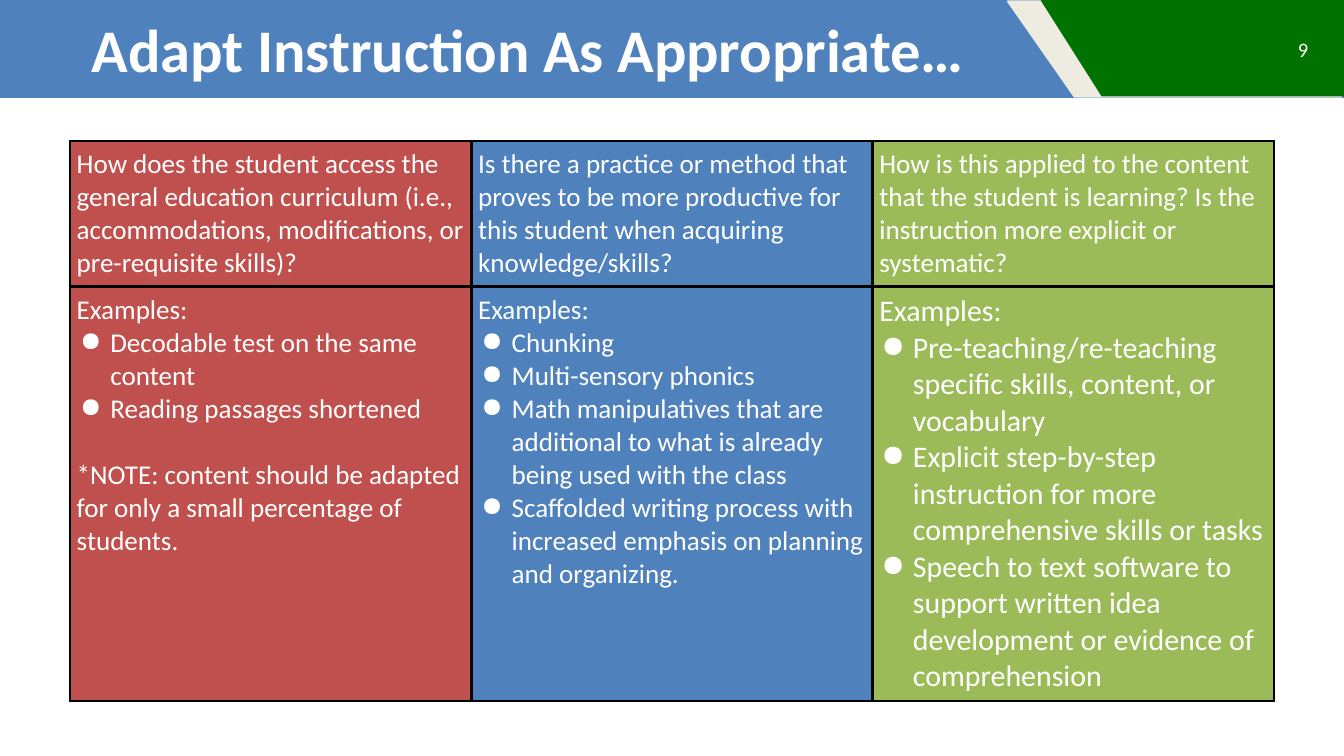
import pptx
import pptx.dml.color
import pptx.enum.shapes
import pptx.enum.text
import pptx.oxml
import pptx.oxml.ns
import pptx.util

Pt = pptx.util.Pt
SHAPE = pptx.enum.shapes.MSO_SHAPE
ALIGN = pptx.enum.text.PP_ALIGN
ANCHOR = pptx.enum.text.MSO_ANCHOR

COLORS = {
    "white": "FFFFFF", "black": "000000", "blue": "4F81BD", "red": "C0504D",
    "lime": "9BBB59", "cream": "EEECE1", "green": "007200",
}

# Each column: fill, text size, bullet hang, question, examples, closing note
COLUMNS = [
    ("red", 29, 32.4,
     "How does the student access the general education curriculum (i.e., "
     "accommodations, modifications, or pre-requisite skills)?",
     ["Decodable test on the same content", "Reading passages shortened"],
     "*NOTE: content should be adapted for only a small percentage of students."),
    ("blue", 29, 32.4,
     "Is there a practice or method that proves to be more productive for this "
     "student when acquiring knowledge/skills?",
     ["Chunking", "Multi-sensory phonics",
      "Math manipulatives that are additional to what is already being used "
      "with the class",
      "Scaffolded writing process with increased emphasis on planning and "
      "organizing."],
     None),
    ("lime", 32, 33.84,
     "How is this applied to the content that the student is learning? Is the "
     "instruction more explicit or systematic?",
     ["Pre-teaching/re-teaching specific skills, content, or vocabulary",
      "Explicit step-by-step instruction for more comprehensive skills or tasks",
      "Speech to text software to support written idea development or evidence "
      "of comprehension"],
     None),
]


def rgb(name):
    return pptx.dml.color.RGBColor.from_string(COLORS[name])


class Deck:
    font = "Calibri"
    heading_size = 29
    inset = 7.2
    bullet_indent = 36
    border = 3

    def __init__(self, width, height):
        self.prs = pptx.Presentation()
        self.prs.slide_width, self.prs.slide_height = Pt(width), Pt(height)
        self.s = self.prs.slides.add_slide(self.prs.slide_layouts[6])

    def shape(self, kind, box, color, rotation=0, line=None):
        sp = self.s.shapes.add_shape(kind, *map(Pt, box))
        sp.shadow.inherit = False
        sp.rotation = rotation
        sp.fill.solid()
        sp.fill.fore_color.rgb = rgb(color)
        if line:
            sp.line.color.rgb = rgb(color)
            sp.line.width = Pt(line)
        else:
            sp.line.fill.background()

    def run(self, p, text, size, bold=False):
        r = p.add_run()
        r.text = text
        r.font.name = self.font
        r.font.size = Pt(size)
        r.font.bold = bold
        r.font.color.rgb = rgb("white")

    def text(self, box, text, size, align, insets, bold=False):
        tf = self.s.shapes.add_textbox(*map(Pt, box)).text_frame
        tf.word_wrap = True
        tf.vertical_anchor = ANCHOR.MIDDLE
        tf.margin_left = tf.margin_right = Pt(insets[0])
        tf.margin_top = tf.margin_bottom = Pt(insets[1])
        p = tf.paragraphs[0]
        p.alignment = align
        self.run(p, text, size, bold)

    def bullet(self, p, hang):
        pPr = p._p.get_or_add_pPr()
        pPr.set("marL", str(Pt(self.bullet_indent)))
        pPr.set("indent", str(-Pt(hang)))
        ns = pptx.oxml.ns.nsdecls("a")
        for xml in (f'<a:buClr {ns}><a:srgbClr val="{COLORS["white"]}"/></a:buClr>',
                    f'<a:buChar {ns} char="●"/>'):
            pPr.append(pptx.oxml.parse_xml(xml))

    def style_cell(self, cell, color):
        """Set fill, insets and a solid border on all four sides."""
        cell.fill.solid()
        cell.fill.fore_color.rgb = rgb(color)
        cell.margin_left = cell.margin_right = Pt(self.inset)
        cell.margin_top = cell.margin_bottom = Pt(self.inset)
        ns = pptx.oxml.ns.nsdecls("a")
        tcPr = cell._tc.get_or_add_tcPr()
        for i, side in enumerate(("lnL", "lnR", "lnT", "lnB")):
            tcPr.insert(i, pptx.oxml.parse_xml(
                f'<a:{side} {ns} w="{Pt(self.border)}"><a:solidFill>'
                f'<a:srgbClr val="{COLORS["black"]}"/></a:solidFill></a:{side}>'))

    def table(self, left, top, col_width, row_heights, columns):
        table = self.s.shapes.add_table(
            len(row_heights), len(columns), Pt(left), Pt(top),
            Pt(col_width * len(columns)), Pt(sum(row_heights))).table
        for row, height in zip(table.rows, row_heights):
            row.height = Pt(height)
        for i, (color, size, hang, question, examples, note) in enumerate(columns):
            table.columns[i].width = Pt(col_width)
            head, body = table.cell(0, i), table.cell(1, i)
            self.style_cell(head, color)
            self.style_cell(body, color)
            self.run(head.text_frame.paragraphs[0], question, self.heading_size)
            tf = body.text_frame
            self.run(tf.paragraphs[0], "Examples:", size)
            for example in examples:
                p = tf.add_paragraph()
                self.bullet(p, hang)
                self.run(p, example, size)
            if note:
                p = tf.add_paragraph()
                p.space_before = Pt(35.4)
                self.run(p, note, size)


def main():
    deck = Deck(1440, 810)
    deck.shape(SHAPE.RECTANGLE, (0, 0, 1440, 105), "blue")
    slanted = SHAPE.FLOWCHART_MANUAL_INPUT
    deck.shape(slanted, (1207.4, -126, 102.2, 357.1), "cream", 270, 2)
    deck.shape(slanted, (1226.9, -110.9, 102.2, 324), "green", 270, 2)
    deck.text((22.3, 7.2, 1087.2, 90), "Adapt Instruction As Appropriate…",
              64.8, ALIGN.CENTER, (7.2, 3.6), bold=True)
    deck.text((1344.2, 31, 72, 43.2), "9", 22, ALIGN.RIGHT, (14.4, 7.2))
    deck.table(75, 151.2, 430, (156, 444), COLUMNS)
    deck.prs.save("out.pptx")


if __name__ == "__main__":
    main()
